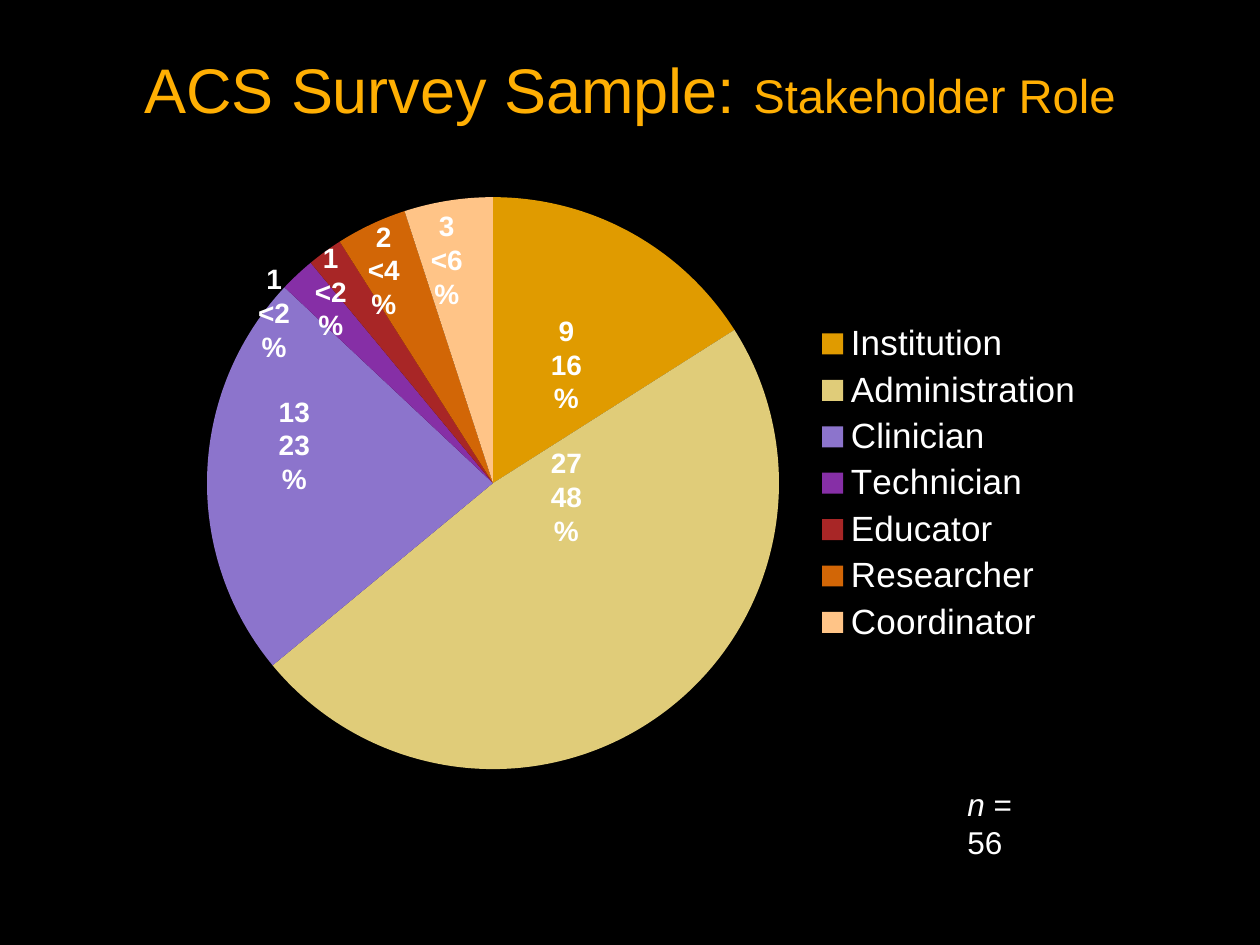
"""Build a slide with a pie chart of survey respondents by stakeholder role."""
import pptx
import pptx.chart.data
import pptx.dml.color
import pptx.enum.chart
import pptx.enum.text
import pptx.oxml
import pptx.oxml.ns
import pptx.util

Inches = pptx.util.Inches
Pt = pptx.util.Pt

COLORS = {"background": "000000", "text": "FFFFFF", "title": "FFAF03"}
FONT = "Arial"
TITLE = [("ACS Survey Sample: ", 36), ("Stakeholder Role", 27)]
ROLES = [
    ("Institution", 16, "E09B00"),
    ("Administration", 48, "E0CC79"),
    ("Clinician", 23, "8C74CC"),
    ("Technician", 2, "862FA6"),
    ("Educator", 2, "A82626"),
    ("Researcher", 4, "D26606"),
    ("Coordinator", 5, "FFC487"),
]
LABELS = [
    ("9", "16%", 4.2, 2.44),
    ("27", "48%", 4.2, 3.49),
    ("13", "23%", 2.04, 3.08),
    ("1", "<2%", 1.88, 2.03),
    ("1", "<2%", 2.33, 1.86),
    ("2", "<4%", 2.75, 1.69),
    ("3", "<6%", 3.25, 1.61),
]
CHART = (1.33, 1.42, 7.38, 4.83)
PIE = {"x": 0.04, "y": 0.03, "w": 0.62, "h": 0.94}


def rgb(name):
    return pptx.dml.color.RGBColor.from_string(COLORS.get(name, name))


def style(font, size, color="text"):
    font.name = FONT
    font.size = Pt(size)
    font.color.rgb = rgb(color)


def add_span(para, text, size, color="text", bold=False, italic=False):
    span = para.add_run()
    span.text = text
    style(span.font, size, color)
    span.font.bold = bold
    span.font.italic = italic


def add_box(page, left, top, width, height):
    box = page.shapes.add_textbox(*map(Inches, (left, top, width, height)))
    box.text_frame.word_wrap = True
    return box.text_frame


def add_title(page):
    title = page.shapes.title
    title.left, title.top, title.width, title.height = map(Inches, (0.5, 0.3, 9, 0.8))
    title.text_frame.vertical_anchor = pptx.enum.text.MSO_ANCHOR.MIDDLE
    para = title.text_frame.paragraphs[0]
    para.alignment = pptx.enum.text.PP_ALIGN.CENTER
    for text, size in TITLE:
        add_span(para, text, size, "title")


def place_pie(chart):
    plot_area = chart.plots[0]._element.getparent()
    for layout in plot_area.findall(pptx.oxml.ns.qn("c:layout")):
        plot_area.remove(layout)
    modes = "".join(f'<c:{key}Mode val="edge"/>' for key in "xy")
    sizes = "".join(f'<c:{key} val="{value}"/>' for key, value in PIE.items())
    plot_area.insert(0, pptx.oxml.parse_xml(
        f'<c:layout {pptx.oxml.ns.nsdecls("c")}><c:manualLayout>'
        f'<c:layoutTarget val="inner"/>{modes}{sizes}</c:manualLayout></c:layout>'))


def add_pie(page):
    data = pptx.chart.data.CategoryChartData()
    data.categories = [name for name, _, _ in ROLES]
    data.add_series("Series 1", [value for _, value, _ in ROLES])
    chart = page.shapes.add_chart(
        pptx.enum.chart.XL_CHART_TYPE.PIE, *map(Inches, CHART), data).chart
    chart.has_title = False
    style(chart.font, 10)
    chart.has_legend = True
    chart.legend.position = pptx.enum.chart.XL_LEGEND_POSITION.RIGHT
    chart.legend.include_in_layout = False
    style(chart.legend.font, 20)
    plot = chart.plots[0]
    plot.vary_by_categories = True
    for index, (_, _, color) in enumerate(ROLES):
        slice_format = plot.series[0].points[index].format
        slice_format.fill.solid()
        slice_format.fill.fore_color.rgb = rgb(color)
        slice_format.line.fill.background()
    place_pie(chart)


def add_labels(page):
    for count, share, left, top in LABELS:
        frame = add_box(page, left, top, 0.59, 0.64)
        for para, text in ((frame.paragraphs[0], count), (frame.add_paragraph(), share)):
            para.alignment = pptx.enum.text.PP_ALIGN.CENTER
            add_span(para, text, 16, bold=True)


def main():
    deck = pptx.Presentation()
    deck.slide_width, deck.slide_height = Inches(10), Inches(7.5)
    page = deck.slides.add_slide(deck.slide_layouts.get_by_name("Title Only"))
    page.background.fill.solid()
    page.background.fill.fore_color.rgb = rgb("background")
    add_title(page)
    add_pie(page)
    add_labels(page)
    para = add_box(page, 7.58, 6.18, 0.83, 0.4).paragraphs[0]
    add_span(para, "n", 18, italic=True)
    add_span(para, " = 56", 18)
    deck.save("out.pptx")


if __name__ == "__main__":
    main()
